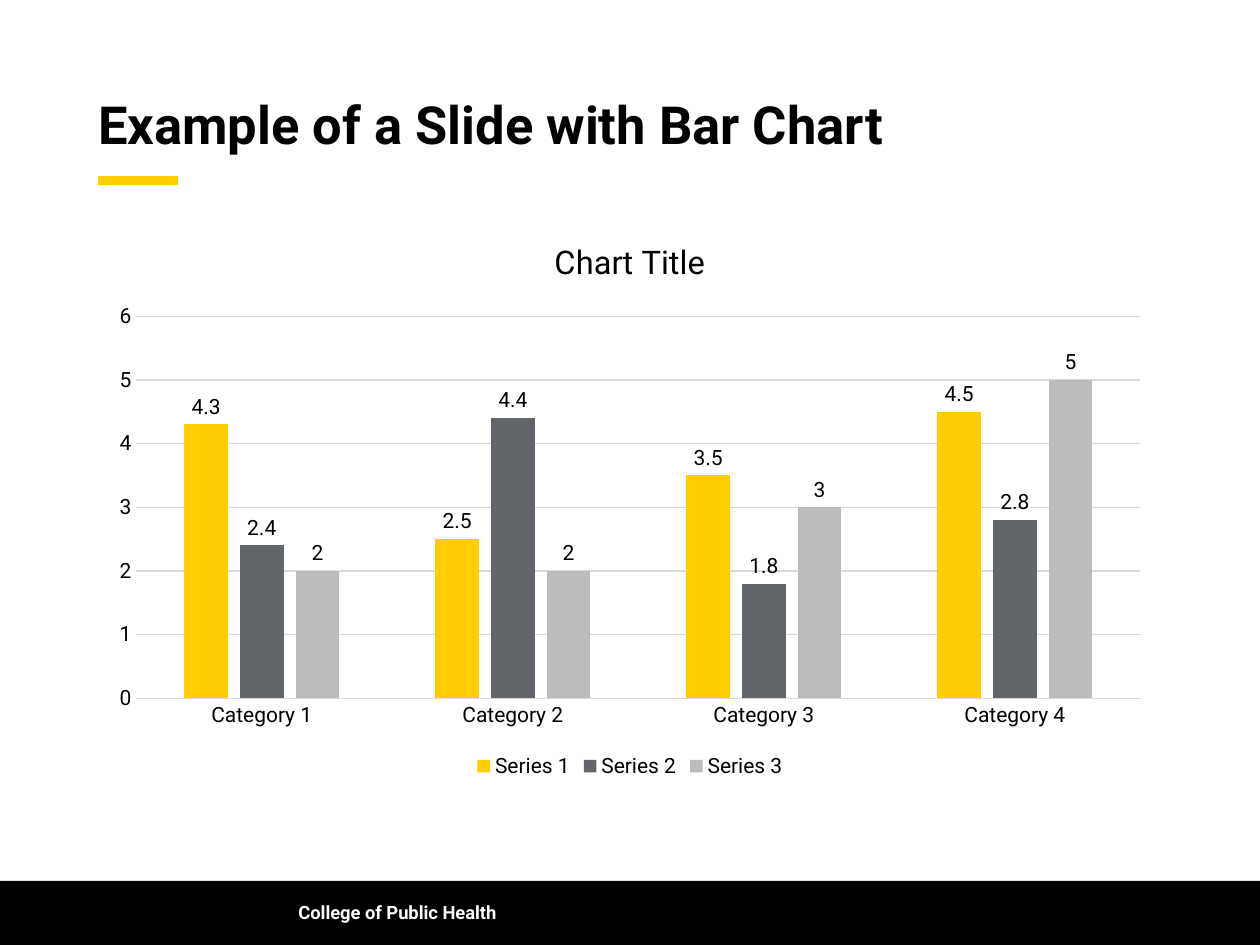
"""Build a slide with a title, a clustered bar chart and a footer band."""
from lxml.etree import SubElement
from pptx import Presentation
from pptx.chart.data import CategoryChartData
from pptx.dml.color import RGBColor
from pptx.enum.chart import XL_CHART_TYPE, XL_LABEL_POSITION, XL_LEGEND_POSITION, XL_TICK_MARK
from pptx.enum.shapes import MSO_CONNECTOR, MSO_SHAPE
from pptx.enum.text import MSO_ANCHOR
from pptx.oxml.ns import qn
from pptx.util import Inches, Pt

TITLE = "Example of a Slide with Bar Chart"
FOOTER = "College of Public Health"
CHART_TITLE = "Chart Title"
CATEGORIES = ["Category 1", "Category 2", "Category 3", "Category 4"]
SERIES = [
    ("Series 1", (4.3, 2.5, 3.5, 4.5), "FFCD00"),
    ("Series 2", (2.4, 4.4, 1.8, 2.8), "62666A"),
    ("Series 3", (2, 2, 3, 5), "BBBCBC"),
]
FONT = "Roboto"
BLACK, WHITE, GOLD, GRID = "000000", "FFFFFF", "FFCD00", "D9D9D9"
WIDTH, HEIGHT = 10, 7.5
MARGIN = 0.78
CONTENT_WIDTH = WIDTH - 2 * MARGIN
FOOTER_TOP = 6.99


def color(hex_string):
    return RGBColor.from_string(hex_string)


def style_font(font, size, hex_string=BLACK, bold=False):
    font.name = FONT
    font.size = Pt(size)
    font.bold = bold
    font.color.rgb = color(hex_string)


def style_line(line, hex_string, width):
    line.color.rgb = color(hex_string)
    line.width = Pt(width)


def add_text(slide, box, text, size, hex_string):
    frame = slide.shapes.add_textbox(*map(Inches, box)).text_frame
    frame.word_wrap = True
    frame.vertical_anchor = MSO_ANCHOR.MIDDLE
    paragraph = frame.paragraphs[0]
    paragraph.text = text
    style_font(paragraph.font, size, hex_string, bold=True)
    return frame


def add_title(slide):
    frame = add_text(slide, (MARGIN, 0.54, CONTENT_WIDTH, 0.95), TITLE, 30, BLACK)
    frame.margin_left = frame.margin_right = frame.margin_top = frame.margin_bottom = 0
    frame.paragraphs[0].line_spacing = 0.9


def add_accent(slide):
    ends = map(Inches, (MARGIN, 1.43, 1.41, 1.43))
    accent = slide.shapes.add_connector(MSO_CONNECTOR.STRAIGHT, *ends)
    style_line(accent.line, GOLD, 5)
    SubElement(accent.element.spPr, qn("a:effectLst"))


def add_footer(slide):
    box = map(Inches, (0, FOOTER_TOP, WIDTH, HEIGHT - FOOTER_TOP))
    band = slide.shapes.add_shape(MSO_SHAPE.RECTANGLE, *box)
    band.shadow.inherit = False
    band.fill.solid()
    band.fill.fore_color.rgb = color(BLACK)
    band.line.fill.background()
    add_text(slide, (2.27, 7.04, 7.12, 0.4), FOOTER, 10.5, WHITE)


def add_bar_chart(slide):
    data = CategoryChartData()
    data.categories = CATEGORIES
    for name, values, _ in SERIES:
        data.add_series(name, values)
    box = map(Inches, (MARGIN, 1.72, CONTENT_WIDTH, 4.5))
    chart = slide.shapes.add_chart(XL_CHART_TYPE.COLUMN_CLUSTERED, *box, data).chart
    style_font(chart.font, 10)

    chart.has_title = True
    heading = chart.chart_title.text_frame.paragraphs[0]
    heading.text = CHART_TITLE
    style_font(heading.font, 18.6)
    chart.chart_title.include_in_layout = False

    chart.has_legend = True
    chart.legend.position = XL_LEGEND_POSITION.BOTTOM
    chart.legend.include_in_layout = False
    style_font(chart.legend.font, 12)

    for axis in (chart.category_axis, chart.value_axis):
        axis.major_tick_mark = axis.minor_tick_mark = XL_TICK_MARK.NONE
        style_font(axis.tick_labels.font, 12)
    style_line(chart.category_axis.format.line, GRID, 0.75)
    chart.value_axis.format.line.fill.background()
    style_line(chart.value_axis.major_gridlines.format.line, GRID, 0.75)

    plot = chart.plots[0]
    plot.gap_width = 219
    plot.overlap = -27
    plot.vary_by_categories = False
    for series, (_, _, fill_color) in zip(plot.series, SERIES):
        series.format.fill.solid()
        series.format.fill.fore_color.rgb = color(fill_color)
        series.invert_if_negative = False
        labels = series.data_labels
        labels.show_value = True
        labels.position = XL_LABEL_POSITION.OUTSIDE_END
        style_font(labels.font, 12)


def main():
    presentation = Presentation()
    presentation.slide_width = Inches(WIDTH)
    presentation.slide_height = Inches(HEIGHT)
    slide = presentation.slides.add_slide(presentation.slide_layouts[6])
    add_accent(slide)
    add_title(slide)
    add_bar_chart(slide)
    add_footer(slide)
    presentation.save("out.pptx")


if __name__ == "__main__":
    main()
